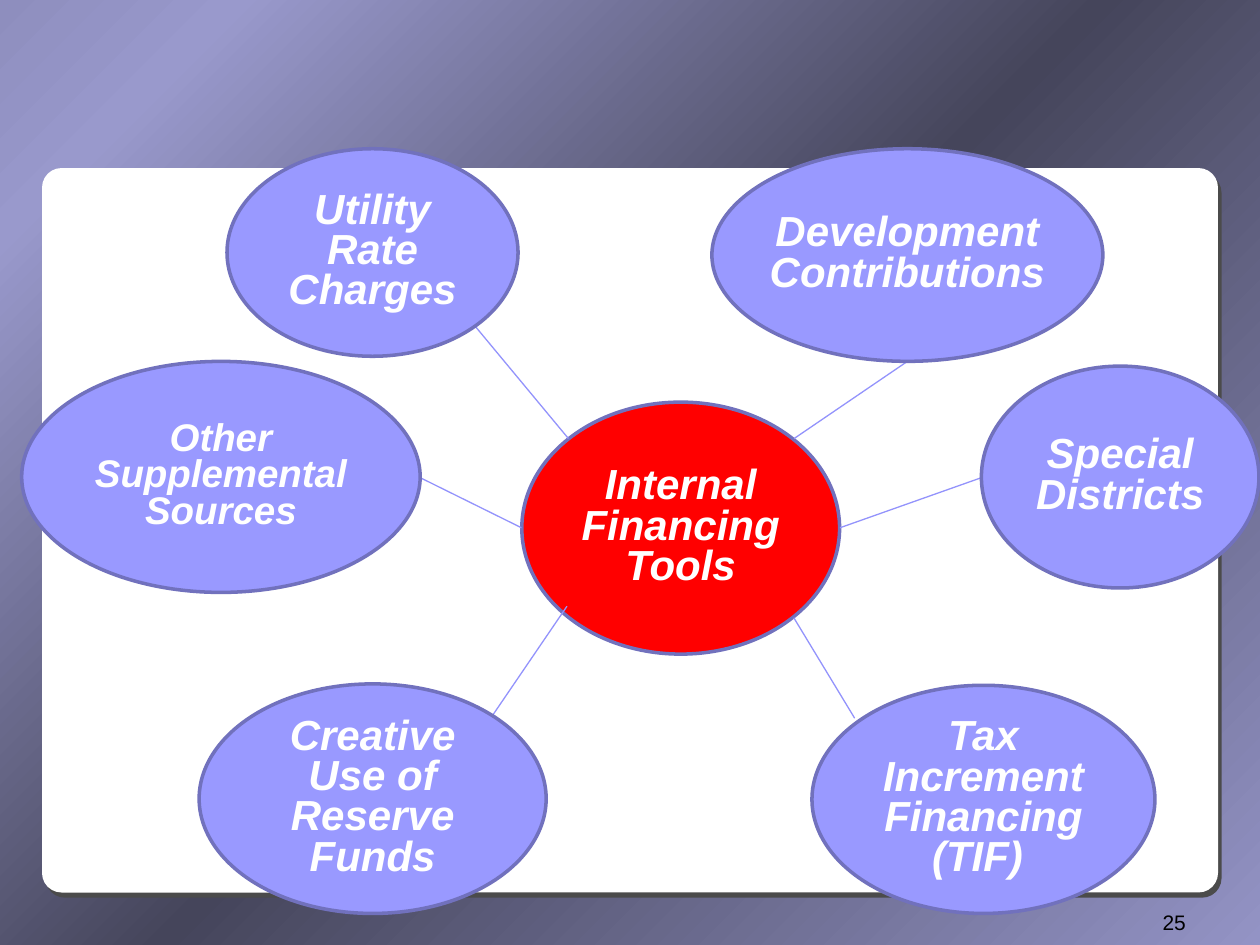
from copy import deepcopy

from lxml.etree import SubElement
from pptx import Presentation
from pptx.dml.color import RGBColor
from pptx.enum.shapes import MSO_CONNECTOR, MSO_SHAPE as SHAPE
from pptx.enum.text import MSO_ANCHOR as ANCHOR, PP_ALIGN as ALIGN
from pptx.oxml.ns import qn
from pptx.util import Pt

COLORS = {
    "panel": "FFFFFF", "shadow": "4B4B4B", "hub": "FF0000", "bubble": "9999FF",
    "outline": "7171BD", "spoke": "9393FC", "light": "FFFFFF", "dark": "000000",
}
BACKDROP = [(0, "8E8EBE"), (11, "9999CC"), (50, "45455B"), (100, "9393C5")]


def rgb(name):
    return RGBColor.from_string(COLORS[name])


def add_bubble(text, box, fill, size=24, side=7.2):
    sp = s.shapes.add_shape(SHAPE.FLOWCHART_CONNECTOR, *map(Pt, box))
    sp.shadow.inherit = False
    sp.fill.solid()
    sp.fill.fore_color.rgb = rgb(fill)
    sp.line.color.rgb = rgb("outline")
    sp.line.width = Pt(2)
    tf = sp.text_frame
    tf.word_wrap = True
    tf.vertical_anchor = ANCHOR.MIDDLE
    tf.margin_left = tf.margin_right = Pt(side)
    tf.text = text
    p = tf.paragraphs[0]
    p.alignment = ALIGN.CENTER
    p.line_spacing = 0.8
    font = p.runs[0].font
    font.name, font.size = "Arial", Pt(size)
    font.bold = font.italic = True
    font.color.rgb = rgb("light")
    return p


prs = Presentation()
prs.slide_width, prs.slide_height = Pt(720), Pt(540)
s = prs.slides.add_slide(prs.slide_layouts[6])

# Gradient backdrop
sp = s.shapes.add_shape(SHAPE.RECTANGLE, 0, 0, prs.slide_width, prs.slide_height)
sp.shadow.inherit = False
sp.line.fill.background()
sp.fill.gradient()
sp.fill.gradient_angle = 315
stops = sp._element.spPr.find(qn("a:gradFill")).find(qn("a:gsLst"))
while len(stops) < len(BACKDROP):
    stops.append(deepcopy(stops[0]))
for stop, (position, color) in zip(stops, BACKDROP):
    stop.set("pos", str(position * 1000))
    for old in list(stop):
        stop.remove(old)
    SubElement(stop, qn("a:srgbClr"), val=color)

# White panel with a hard shadow
sp = s.shapes.add_shape(SHAPE.ROUNDED_RECTANGLE, Pt(24), Pt(96), Pt(672), Pt(414))
sp.adjustments[0] = 0.027
sp.fill.solid()
sp.fill.fore_color.rgb = rgb("panel")
sp.line.fill.background()
effects = SubElement(sp._element.spPr, qn("a:effectLst"))
shadow = SubElement(effects, qn("a:outerShdw"), blurRad="0", dist=str(Pt(3.6)),
                    dir=str(56 * 60000), algn="ctr", rotWithShape="0")
SubElement(shadow, qn("a:srgbClr"), val=COLORS["shadow"])

# Hub
p = add_bubble("Internal Financing Tools", (298.2, 229.8, 181.6, 144), "hub")
p.space_after = Pt(10)

# Spokes, from the hub outwards
SPOKES = [
    (453.8, 250.6, 518.4, 206.6),
    (480, 301.6, 561, 272.9),
    (324.8, 250.6, 271.6, 186.5),
    (298, 301.6, 240, 272.9),
    (453.6, 353, 488.4, 410.4),
    (324, 346.4, 280.4, 410.4),
]
for ends in SPOKES:
    line = s.shapes.add_connector(MSO_CONNECTOR.STRAIGHT, *map(Pt, ends))
    line.line.color.rgb = rgb("spoke")
    line.line.width = Pt(0.75)
    SubElement(line._element.spPr, qn("a:effectLst"))

# Financing tools: text, box, text size, side margin
TOOLS = [
    ("Development Contributions", (406.8, 85, 223.4, 121.5), 24, 0),
    ("Special Districts", (560.8, 209.2, 158.6, 126.8), 24, 7.2),
    ("Utility Rate Charges", (129.7, 85, 166.3, 118.6), 24, 7.2),
    ("Other Supplemental Sources", (12.4, 206.5, 227.7, 132), 22, 0),
    ("Creative Use of Reserve Funds", (113.8, 390.8, 198.3, 131.2), 24, 7.2),
    ("Tax Increment Financing (TIF) ", (464, 391.6, 196, 130.4), 24, 7.2),
]
for text, box, size, side in TOOLS:
    add_bubble(text, box, "bubble", size, side)

# Page number
tf = s.shapes.add_textbox(Pt(522.7), Pt(512.6), Pt(162), Pt(28.8)).text_frame
tf.word_wrap = True
tf.vertical_anchor = ANCHOR.MIDDLE
tf.text = "25"
p = tf.paragraphs[0]
p.alignment = ALIGN.RIGHT
font = p.runs[0].font
font.name, font.size = "Arial", Pt(12)
font.color.rgb = rgb("dark")

prs.save("out.pptx")
